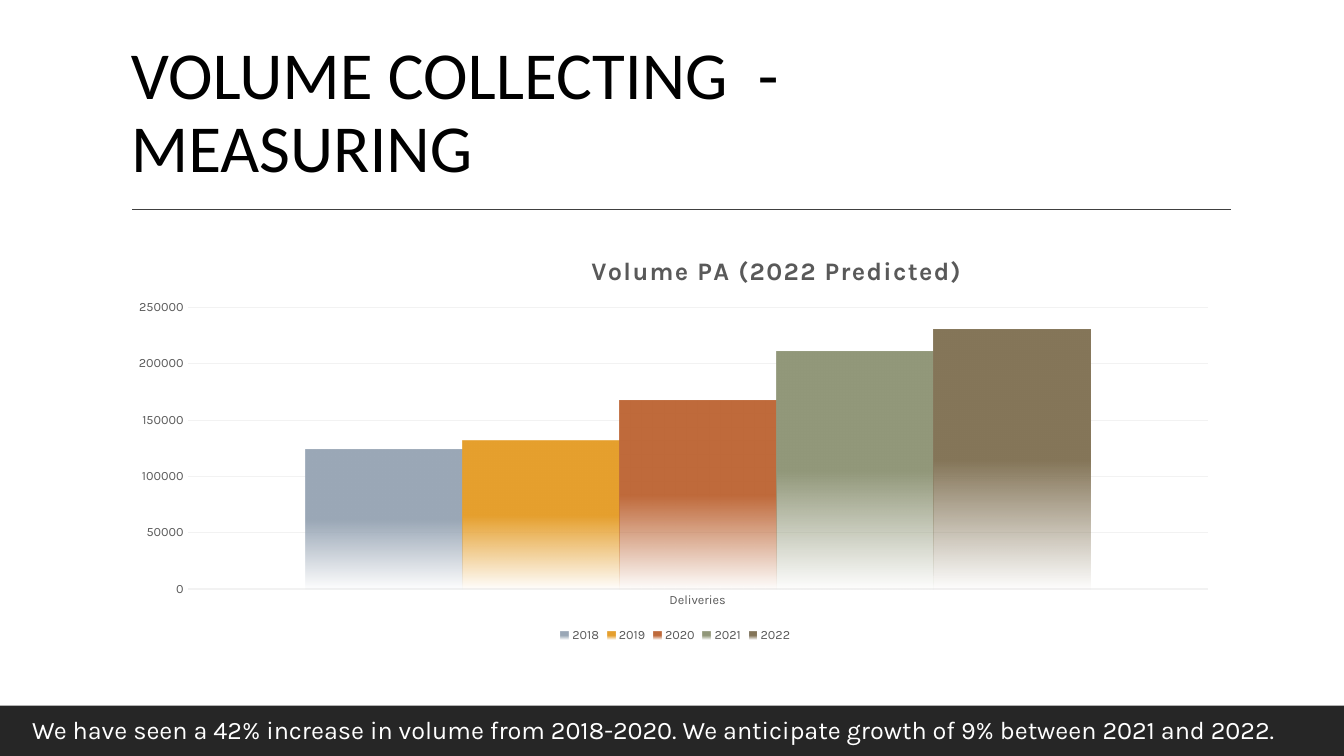
from lxml import etree
from pptx import Presentation
from pptx import util as u
from pptx.chart import data as chart_data
from pptx.dml.color import RGBColor
from pptx.enum import chart as kinds, shapes, text
from pptx.oxml import ns

BLACK = RGBColor(0x00, 0x00, 0x00)
WHITE = RGBColor(0xFF, 0xFF, 0xFF)
FOOTER = RGBColor(0x26, 0x26, 0x26)
RULE = RGBColor(0x40, 0x40, 0x40)
GREY = RGBColor(0x59, 0x59, 0x59)
GRID = RGBColor(0xF2, 0xF2, 0xF2)
VOLUMES = [
    ("2018", 124000, RGBColor(0x9B, 0xA8, 0xB7)),
    ("2019", 132000, RGBColor(0xE6, 0xA0, 0x2E)),
    ("2020", 167000, RGBColor(0xBF, 0x6A, 0x3B)),
    ("2021", 211000, RGBColor(0x92, 0x98, 0x7A)),
    ("2022", 230000, RGBColor(0x85, 0x76, 0x59)),
]


def set_font(font, name, size, color, bold=False):
    font.name = name
    font.size = u.Pt(size)
    font.color.rgb = color
    font.bold = bold


def place(parent, index, **settings):
    """Give a chart part a manual layout, as fractions of the chart."""
    for old in parent.findall(ns.qn("c:layout")):
        parent.remove(old)
    layout = etree.Element(ns.qn("c:layout"))
    manual = etree.SubElement(layout, ns.qn("c:manualLayout"))
    for tag, value in settings.items():
        etree.SubElement(manual, ns.qn("c:" + tag)).set("val", str(value))
    parent.insert(index, layout)


deck = Presentation()
deck.slide_width, deck.slide_height = u.Inches(13.33), u.Inches(7.5)
page = deck.slides.add_slide(deck.slide_layouts[6])

# Footer band
band = page.shapes.add_shape(shapes.MSO_SHAPE.RECTANGLE, 0, u.Inches(7),
                             deck.slide_width, u.Inches(0.5))
band.shadow.inherit = False
band.fill.solid()
band.fill.fore_color.rgb = FOOTER
band.line.fill.background()

# Rule under the title
rule = page.shapes.add_connector(shapes.MSO_CONNECTOR.STRAIGHT, u.Inches(1.31),
                                 u.Inches(2.08), u.Inches(12.21), u.Inches(2.08))
rule.line.color.rgb = RULE
rule.line.width = u.Pt(1)
etree.SubElement(rule._element.spPr, ns.qn("a:effectLst"))

# Title
title = page.shapes.add_textbox(u.Inches(1.2), u.Inches(0.31), u.Inches(11), u.Inches(1.59))
title.text_frame.word_wrap = True
title.text_frame.vertical_anchor = text.MSO_ANCHOR.BOTTOM
title.text_frame.text = "VOLUME COLLECTING  -\vMEASURING"
para = title.text_frame.paragraphs[0]
para.line_spacing = 0.9
set_font(para.font, "Calibri", 48, BLACK)

# Column chart
volumes = chart_data.CategoryChartData()
volumes.categories = ["Deliveries"]
for year, volume, color in VOLUMES:
    volumes.add_series(year, [volume])
chart = page.shapes.add_chart(kinds.XL_CHART_TYPE.COLUMN_CLUSTERED, u.Inches(1.2),
                              u.Inches(2.31), u.Inches(11), u.Inches(4.11), volumes).chart
set_font(chart.font, "Karla", 10, BLACK)
plot = chart.plots[0]
plot.gap_width = 150
plot.overlap = 0
plot.vary_by_categories = False
place(chart._chartSpace.chart.plotArea, 0, layoutTarget="inner", xMode="edge",
      yMode="edge", x=0.06, y=0.18, w=0.92, h=0.68)

# Columns fade out over their lower half
for series, (year, volume, color) in zip(plot.series, VOLUMES):
    fill = series.format.fill
    fill.gradient()
    fill.gradient_angle = 270
    for stop, position in zip(fill.gradient_stops, (0.5, 1)):
        stop.color.rgb = color
        stop.position = position
    faded = list(series._element.iter(ns.qn("a:srgbClr")))[-1]
    etree.SubElement(faded, ns.qn("a:alpha")).set("val", "0")

# Chart title
chart.has_title = True
heading = chart.chart_title.text_frame
heading.text = "Volume PA (2022 Predicted)"
span = heading.paragraphs[0].runs[0]
set_font(span.font, "Karla", 18, GREY, bold=True)
span.font._element.set("spc", "100")
chart.chart_title.include_in_layout = False
place(chart.chart_title._element, 1, xMode="edge", yMode="edge", x=0.42, y=0.04)

# Axes and legend
for axis in (chart.category_axis, chart.value_axis):
    axis.major_tick_mark = kinds.XL_TICK_MARK.NONE
    axis.minor_tick_mark = kinds.XL_TICK_MARK.NONE
    axis.format.line.fill.background()
    set_font(axis.tick_labels.font, "Karla", 9, GREY)
chart.value_axis.minimum_scale = 0
chart.value_axis.maximum_scale = 250000
chart.value_axis.major_unit = 50000
grid = chart.value_axis.major_gridlines.format.line
grid.color.rgb = GRID
grid.width = u.Pt(0.75)
chart.has_legend = True
chart.legend.position = kinds.XL_LEGEND_POSITION.BOTTOM
chart.legend.include_in_layout = False
set_font(chart.legend.font, "Karla", 9, GREY)

# Footer message
box = page.shapes.add_textbox(u.Inches(0.22), u.Inches(7.04), u.Inches(12.86), u.Inches(0.4))
box.text_frame.word_wrap = True
box.text_frame.text = ("We have seen a 42% increase in volume from 2018-2020. "
                       "We anticipate growth of 9% between 2021 and 2022.")
set_font(box.text_frame.paragraphs[0].font, "Karla", 18, WHITE)

deck.save("out.pptx")
